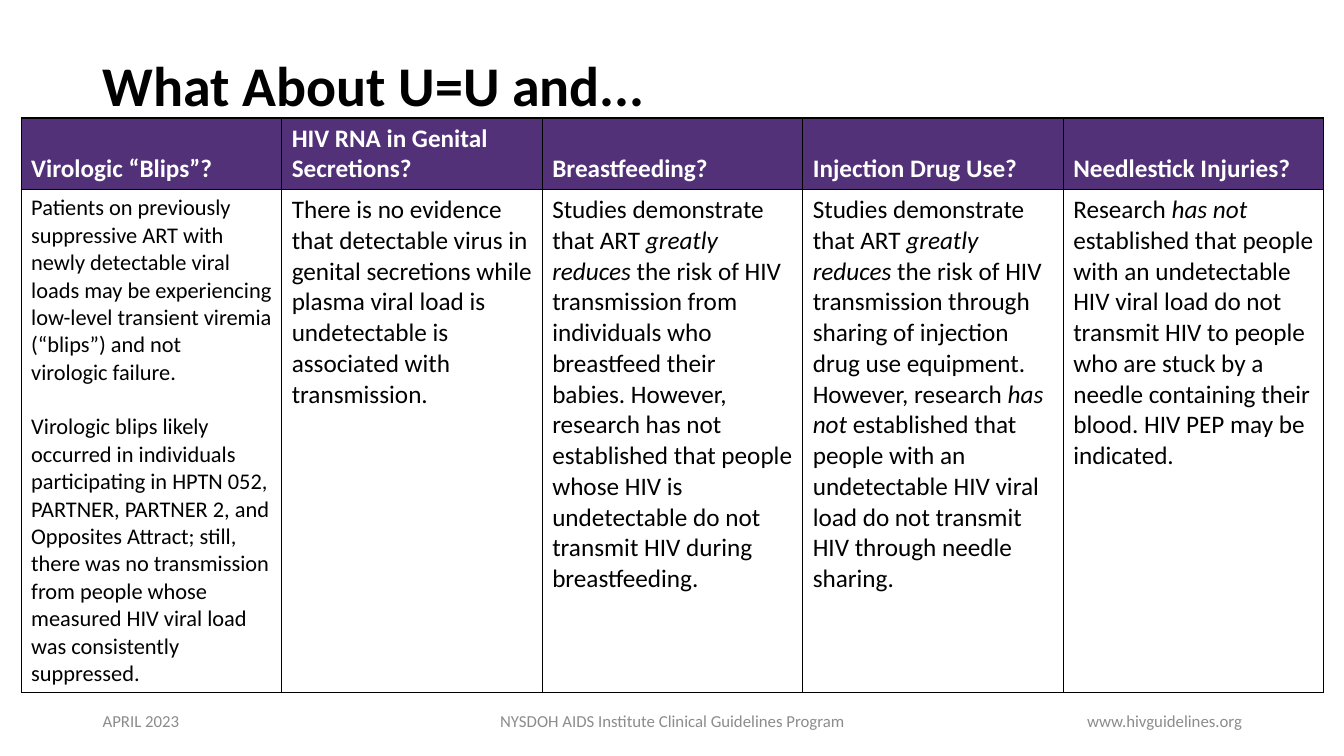
"""Build the slide on U=U and five related questions."""
from dataclasses import dataclass

import lxml.etree
import pptx
import pptx.dml.color
import pptx.enum.text
import pptx.oxml.ns
import pptx.util

Inches = pptx.util.Inches
Pt = pptx.util.Pt
Align = pptx.enum.text.PP_ALIGN
Anchor = pptx.enum.text.MSO_ANCHOR
qn = pptx.oxml.ns.qn


@dataclass(frozen=True)
class Theme:
    """Hold the colours and type sizes of the slide."""

    font: str = "Calibri"
    ink: str = "000000"
    header_ink: str = "FFFFFF"
    header_fill: str = "523178"
    footer_ink: str = "8C8C8C"
    title_size: int = 40
    table_size: int = 18
    dense_size: int = 16
    footer_size: int = 12
    border_width: int = 1


THEME = Theme()

# Asterisks enclose italic words; a newline is a line break.
TOPICS = [
    ("Virologic “Blips”?", THEME.dense_size, [
        "Patients on previously suppressive ART with newly detectable viral loads may be "
        "experiencing low-level transient viremia (“blips”) and not\nvirologic failure.",
        "Virologic blips likely occurred in individuals participating in HPTN 052, PARTNER, "
        "PARTNER 2, and Opposites Attract; still, there was no transmission from people whose "
        "measured HIV viral load was consistently suppressed."]),
    ("HIV RNA in Genital Secretions?", THEME.table_size, [
        "There is no evidence that detectable virus in genital secretions while plasma viral "
        "load is undetectable is associated with transmission."]),
    ("Breastfeeding?", THEME.table_size, [
        "Studies demonstrate that ART *greatly reduces* the risk of HIV transmission from "
        "individuals who breastfeed their babies. However, research has not established that "
        "people whose HIV is undetectable do not transmit HIV during breastfeeding."]),
    ("Injection Drug Use?", THEME.table_size, [
        "Studies demonstrate that ART *greatly reduces* the risk of HIV transmission through "
        "sharing of injection drug use equipment. However, research *has not* established that "
        "people with an undetectable HIV viral load do not transmit HIV through needle sharing."]),
    ("Needlestick Injuries?", THEME.table_size, [
        "Research *has not* established that people with an undetectable HIV viral load do not "
        "transmit HIV to people who are stuck by a needle containing their blood. HIV PEP may "
        "be indicated."]),
]

FOOTERS = [
    ("APRIL 2023", 0.92, 3, Align.LEFT),
    ("NYSDOH AIDS Institute Clinical Guidelines Program", 4.42, 4.5, Align.CENTER),
    ("www.hivguidelines.org", 9.42, 3, Align.RIGHT),
]


def add_run(paragraph, text, size, color, bold=False, italic=False):
    """Append one formatted run."""
    run = paragraph.add_run()
    run.text = text
    run.font.name = THEME.font
    run.font.size = Pt(size)
    run.font.color.rgb = pptx.dml.color.RGBColor.from_string(color)
    run.font.bold = bold
    run.font.italic = italic


def add_break(paragraph, size):
    """Append a line break of the given type size."""
    paragraph.add_line_break()
    properties = lxml.etree.SubElement(paragraph._p[-1], qn("a:rPr"))
    properties.set("sz", str(size * 100))


def write_marked(paragraph, marked, size, color, bold=False):
    """Write text with its italic words and line breaks."""
    for line_number, line in enumerate(marked.split("\n")):
        if line_number:
            add_break(paragraph, size)
        for part_number, part in enumerate(line.split("*")):
            add_run(paragraph, part, size, color, bold, part_number % 2 == 1)


def set_borders(cell):
    """Draw a solid line on each side of a cell."""
    properties = cell._tc.get_or_add_tcPr()
    for side in ("a:lnL", "a:lnR", "a:lnT", "a:lnB"):
        line = lxml.etree.SubElement(properties, qn(side), w=str(Pt(THEME.border_width)))
        fill = lxml.etree.SubElement(line, qn("a:solidFill"))
        lxml.etree.SubElement(fill, qn("a:srgbClr"), val=THEME.ink)


def fill_cell(cell, texts, size, header=False):
    """Format a cell and write its paragraphs."""
    set_borders(cell)
    if header:
        cell.fill.solid()
        cell.fill.fore_color.rgb = pptx.dml.color.RGBColor.from_string(THEME.header_fill)
    else:
        cell.fill.background()
    cell.vertical_anchor = Anchor.BOTTOM if header else Anchor.TOP
    color = THEME.header_ink if header else THEME.ink
    for number, text in enumerate(texts):
        paragraph = cell.text_frame.add_paragraph() if number else cell.text_frame.paragraphs[0]
        if number:
            paragraph.space_before = Pt(size * 1.22)
        write_marked(paragraph, text, size, color, header)


def add_title(slide, text):
    """Place and write the slide title."""
    title = slide.shapes.title
    title.left, title.top = Inches(0.92), Inches(0.15)
    title.width, title.height = Inches(10.63), Inches(1.45)
    title.text_frame.vertical_anchor = Anchor.MIDDLE
    heading = title.text_frame.paragraphs[0]
    heading.alignment = Align.LEFT
    heading.line_spacing = 0.9
    add_run(heading, text, THEME.title_size, THEME.ink, bold=True)


def add_topics(slide):
    """Add the table with one column per topic."""
    frame = slide.shapes.add_table(
        2, len(TOPICS), Inches(0.21), Inches(1.17), Inches(12.92), Inches(5.7))
    table = frame.table
    table.horz_banding = False
    table.rows[0].height, table.rows[1].height = Inches(0.71), Inches(4.99)
    for column, (question, size, answer) in enumerate(TOPICS):
        fill_cell(table.cell(0, column), [question], THEME.table_size, header=True)
        fill_cell(table.cell(1, column), answer, size)


def add_footer(slide, text, left, width, alignment):
    """Add one footer text."""
    box = slide.shapes.add_textbox(Inches(left), Inches(6.95), Inches(width), Inches(0.4))
    box.text_frame.word_wrap = True
    box.text_frame.vertical_anchor = Anchor.MIDDLE
    paragraph = box.text_frame.paragraphs[0]
    paragraph.alignment = alignment
    add_run(paragraph, text, THEME.footer_size, THEME.footer_ink)


def main():
    """Build and save the slide."""
    presentation = pptx.Presentation()
    presentation.slide_width, presentation.slide_height = Inches(13.33), Inches(7.5)
    slide = presentation.slides.add_slide(presentation.slide_layouts[5])
    add_title(slide, "What About U=U and...")
    add_topics(slide)
    for footer in FOOTERS:
        add_footer(slide, *footer)
    presentation.save("out.pptx")


if __name__ == "__main__":
    main()
